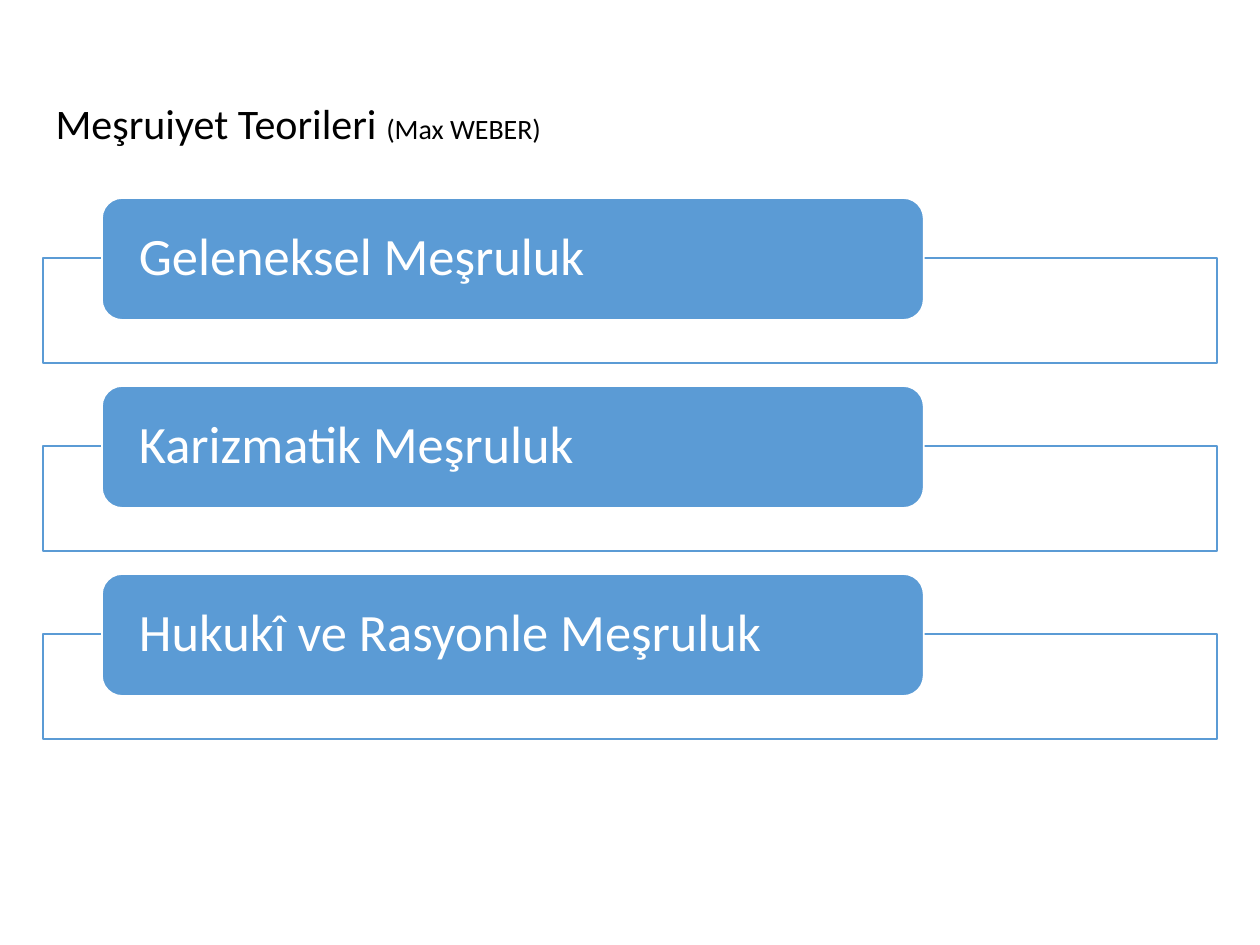
import pptx
import pptx.util
import pptx.dml.color
import pptx.enum.shapes
import pptx.enum.text
import pptx.oxml
import pptx.oxml.ns

SCALE = 914400 / 126
BLUE = "5B9BD5"
WHITE = "FFFFFF"
KIND = pptx.enum.shapes.MSO_SHAPE
ALIGN = pptx.enum.text.PP_ALIGN
ANCHOR = pptx.enum.text.MSO_ANCHOR


def px(size):
    return pptx.util.Emu(round(size * SCALE))


def color(code):
    return pptx.dml.color.RGBColor.from_string(code)


def style(run, size, code):
    run.font.name = "Calibri"
    run.font.size = pptx.util.Pt(size)
    run.font.color.rgb = color(code)


def add_shape(slide, kind, box, fill, line):
    shape = slide.shapes.add_shape(kind, *map(px, box))
    shape.shadow.inherit = False
    shape.fill.solid()
    shape.fill.fore_color.rgb = color(fill)
    shape.line.color.rgb = color(line)
    shape.line.width = pptx.util.Pt(1)
    return shape


def fade(shape, percent):
    tone = shape.fill._xPr.find(".//" + pptx.oxml.ns.qn("a:srgbClr"))
    alpha = pptx.oxml.parse_xml(
        f'<a:alpha {pptx.oxml.ns.nsdecls("a")} val="{percent * 1000}"/>')
    tone.append(alpha)


def add_title(slide, box, text, author):
    title = slide.shapes.title
    title.left, title.top, title.width, title.height = map(px, box)
    frame = title.text_frame
    frame.word_wrap = True
    frame.auto_size = pptx.enum.text.MSO_AUTO_SIZE.NONE
    frame.vertical_anchor = ANCHOR.TOP
    para = frame.paragraphs[0]
    para.text = text
    para.add_run().text = author
    para.alignment = ALIGN.LEFT
    para.line_spacing = 0.9
    para.space_before = pptx.util.Pt(0)
    for run, size in zip(para.runs, (24, 16)):
        style(run, size, "000000")


def add_item(slide, box, text):
    left, top, width, height = box
    panel = add_shape(slide, KIND.RECTANGLE,
                      (left, top + 60, width, height - 60), WHITE, BLUE)
    fade(panel, 90)
    label = add_shape(slide, KIND.ROUNDED_RECTANGLE,
                      (left + 59, top, width * 0.7, 122), BLUE, WHITE)
    frame = label.text_frame
    frame.word_wrap = True
    frame.vertical_anchor = ANCHOR.MIDDLE
    frame.margin_left = frame.margin_right = px(31)
    frame.margin_top = frame.margin_bottom = 0
    para = frame.paragraphs[0]
    para.text = text
    para.alignment = ALIGN.LEFT
    para.line_spacing = 0.9
    style(para.runs[0], 30, WHITE)


def add_list(slide, box, items, gap):
    left, top, width, height = box
    tall = (height - gap * (len(items) - 1)) / len(items)
    for index, text in enumerate(items):
        add_item(slide, (left, top + index * (tall + gap), width, tall), text)


def main():
    deck = pptx.Presentation()
    deck.slide_width, deck.slide_height = px(1260), px(945)
    slide = deck.slides.add_slide(deck.slide_layouts[5])
    add_title(slide, (43, 97, 1174, 58), "Meşruiyet Teorileri ", "(Max WEBER)")
    items = ["Geleneksel Meşruluk", "Karizmatik Meşruluk",
             "Hukukî ve Rasyonle Meşruluk"]
    add_list(slide, (43, 198, 1174, 541), items, 23)
    deck.save("out.pptx")


if __name__ == "__main__":
    main()
